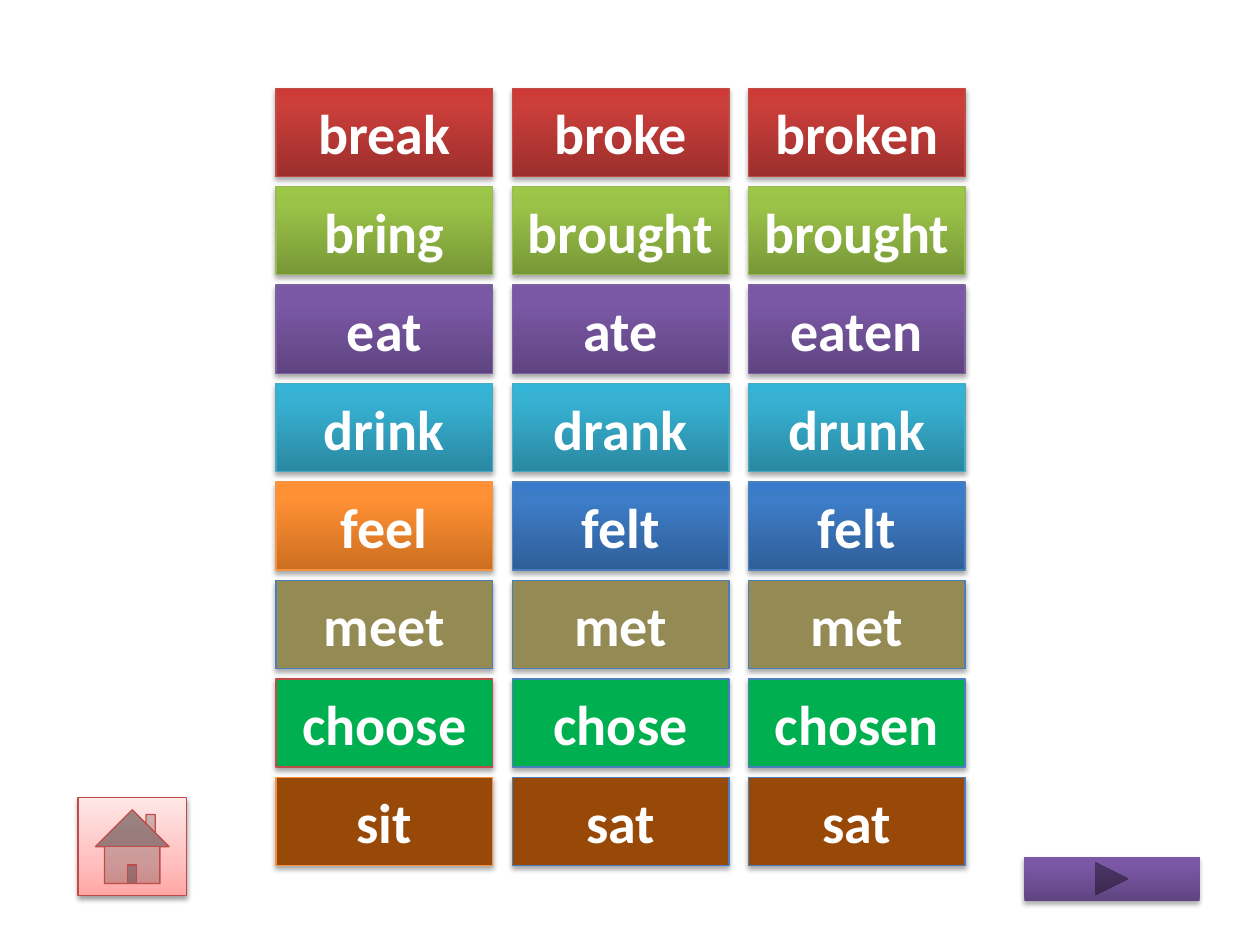
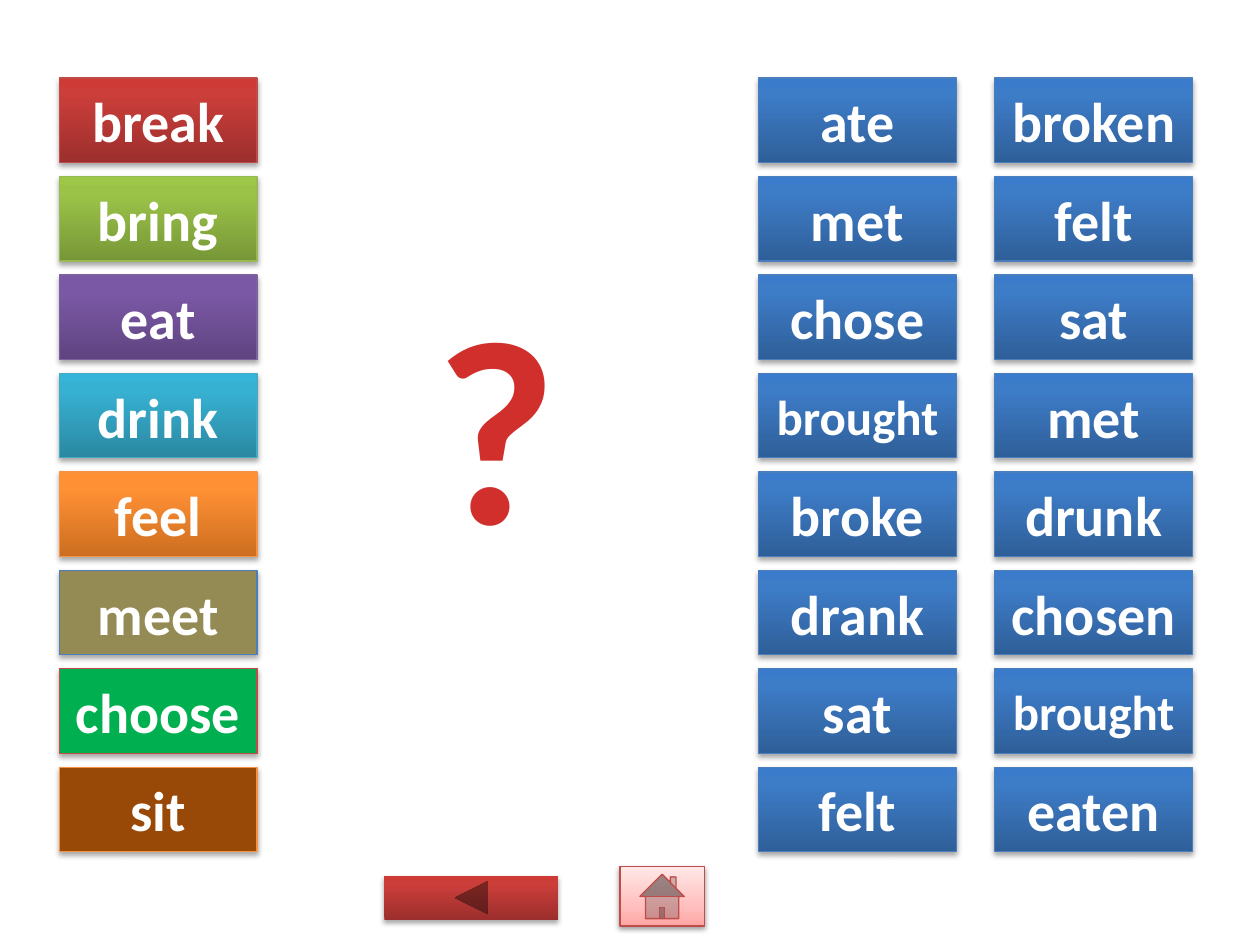
from copy import deepcopy

from lxml import etree
from pptx import Presentation
from pptx.dml.color import RGBColor
from pptx.enum.shapes import MSO_SHAPE
from pptx.enum.text import MSO_ANCHOR, MSO_AUTO_SIZE, PP_ALIGN
from pptx.oxml.ns import qn
from pptx.util import Inches, Pt

RECTANGLE = MSO_SHAPE.RECTANGLE
NEXT_BUTTON = MSO_SHAPE.ACTION_BUTTON_FORWARD_OR_NEXT
BACK_BUTTON = MSO_SHAPE.ACTION_BUTTON_BACK_OR_PREVIOUS
HOME_BUTTON = MSO_SHAPE.ACTION_BUTTON_HOME
CENTER = PP_ALIGN.CENTER
MIDDLE = MSO_ANCHOR.MIDDLE
FIT_TEXT = MSO_AUTO_SIZE.SHAPE_TO_FIT_TEXT

FONT = "Calibri"
WHITE = RGBColor(0xFF, 0xFF, 0xFF)
QUESTION_RED = RGBColor(0xD0, 0x2F, 0x2C)

# Outline colours
RED_LINE = RGBColor(0xBF, 0x4C, 0x48)
GREEN_LINE = RGBColor(0x98, 0xB9, 0x55)
PURPLE_LINE = RGBColor(0x7D, 0x60, 0xA0)
AQUA_LINE = RGBColor(0x46, 0xAA, 0xC5)
ORANGE_LINE = RGBColor(0xF6, 0x92, 0x40)
BLUE_LINE = RGBColor(0x4B, 0x7E, 0xBC)

# Plain fills
OLIVE = RGBColor(0x94, 0x8A, 0x54)
EMERALD = RGBColor(0x00, 0xB0, 0x50)
BROWN = RGBColor(0x98, 0x48, 0x07)


def gradient(bottom, middle, top, middle_at=0.8):
    """Stops of a fill that runs from the bottom edge to the top edge."""
    colors = [RGBColor.from_string(code) for code in (bottom, middle, top)]
    return list(zip((0, middle_at, 1), colors))


RED = gradient("9C2F2D", "CB3E3A", "CE3B37")
GREEN = gradient("779737", "9BC348", "9DC746")
PURPLE = gradient("5F4480", "7B58A6", "7C57A8")
AQUA = gradient("2A88A2", "37B1D2", "34B4D6")
ORANGE = gradient("CC6E20", "FF9034", "FF9136")
BLUE = gradient("2F5F99", "3D7CC7", "3A7CCB")
PINK = gradient("FFA6A5", "FFC0BF", "FFE7E7", middle_at=0.35)

# Verb forms, then (fill, line) of the infinitive and of the two past forms
VERBS = [
    (("break", "broke", "broken"), (RED, RED_LINE), (RED, RED_LINE)),
    (("bring", "brought", "brought"), (GREEN, GREEN_LINE), (GREEN, GREEN_LINE)),
    (("eat", "ate", "eaten"), (PURPLE, PURPLE_LINE), (PURPLE, PURPLE_LINE)),
    (("drink", "drank", "drunk"), (AQUA, AQUA_LINE), (AQUA, AQUA_LINE)),
    (("feel", "felt", "felt"), (ORANGE, ORANGE_LINE), (BLUE, BLUE_LINE)),
    (("meet", "met", "met"), (OLIVE, BLUE_LINE), (OLIVE, BLUE_LINE)),
    (("choose", "chose", "chosen"), (EMERALD, RED_LINE), (EMERALD, BLUE_LINE)),
    (("sit", "sat", "sat"), (BROWN, ORANGE_LINE), (BROWN, BLUE_LINE)),
]
SHUFFLED_PAST = ["ate", "met", "chose", "brought", "broke", "drank", "sat", "felt"]
SHUFFLED_PARTICIPLES = ["broken", "felt", "sat", "met", "drunk", "chosen",
                        "brought", "eaten"]

# Card grid, in inches
ROW_PITCH = 5.47 / 7
COLUMN_PITCH = 3.75 / 2
ANSWER_CARD = (1.72, 0.7)
QUIZ_CARD = (1.57, 0.67)


def set_fill(shape, fill):
    if isinstance(fill, RGBColor):
        shape.fill.solid()
        shape.fill.fore_color.rgb = fill
        return
    shape.fill.gradient()
    shape.fill.gradient_angle = 90
    stop_list = shape._element.spPr.find(qn("a:gradFill")).find(qn("a:gsLst"))
    stop_list.append(deepcopy(stop_list[-1]))
    for stop, (position, color) in zip(shape.fill.gradient_stops, fill):
        stop.position = position
        stop.color.rgb = color


def set_shadow(shape, opacity, distance):
    shape.shadow.inherit = False
    effects = shape._element.spPr.find(qn("a:effectLst"))
    shadow = etree.SubElement(effects, qn("a:outerShdw"), blurRad=str(Pt(3.1)),
                              dist=str(Pt(distance)), dir="5400000", rotWithShape="0")
    color = etree.SubElement(shadow, qn("a:srgbClr"), val="000000")
    etree.SubElement(color, qn("a:alpha"), val=str(opacity * 1000))


def add_raised_shape(page, kind, left, top, size, fill, line=None,
                     opacity=35, distance=1.8):
    shape = page.shapes.add_shape(kind, Inches(left), Inches(top), *map(Inches, size))
    set_fill(shape, fill)
    if line is None:
        shape.line.fill.background()
    else:
        shape.line.color.rgb = line
        shape.line.width = Pt(0.75)
    set_shadow(shape, opacity, distance)
    return shape


def write_centered(frame, text, size, color):
    frame.word_wrap = True
    para = frame.paragraphs[0]
    para.text = text
    para.alignment = CENTER
    para.font.name = FONT
    para.font.size = Pt(size)
    para.font.bold = True
    para.font.color.rgb = color


def add_card(page, left, top, size, word, style, font_size=32):
    card = add_raised_shape(page, RECTANGLE, left, top, size, *style)
    card.text_frame.vertical_anchor = MIDDLE
    write_centered(card.text_frame, word, font_size, WHITE)


def add_home_button(page, left, top, size):
    add_raised_shape(page, HOME_BUTTON, left, top, size, PINK, RED_LINE,
                     opacity=38, distance=1.6)


def add_question_mark(page):
    box = page.shapes.add_textbox(Inches(3.2), Inches(2.03), Inches(1.48), Inches(2.63))
    write_centered(box.text_frame, "?", 150, QUESTION_RED)
    box.text_frame.auto_size = FIT_TEXT


def build_answers(page):
    for row, (forms, first_style, past_style) in enumerate(VERBS):
        for column, word in enumerate(forms):
            style = past_style if column else first_style
            add_card(page, 2.19 + column * COLUMN_PITCH, 0.7 + row * ROW_PITCH,
                     ANSWER_CARD, word, style)
    add_raised_shape(page, NEXT_BUTTON, 8.13, 6.8, (1.39, 0.35), PURPLE)
    add_home_button(page, 0.62, 6.33, (0.86, 0.78))


def build_quiz(page):
    rows = zip(VERBS, SHUFFLED_PAST, SHUFFLED_PARTICIPLES)
    for row, ((forms, style, _), *past_words) in enumerate(rows):
        top = 0.62 + row * ROW_PITCH
        add_card(page, 0.47, top, QUIZ_CARD, forms[0], style)
        for column, word in enumerate(past_words):
            font_size = 28 if word == "brought" else 32
            add_card(page, 6.02 + column * COLUMN_PITCH, top, QUIZ_CARD, word,
                     (BLUE, BLUE_LINE), font_size)
    add_question_mark(page)
    add_raised_shape(page, BACK_BUTTON, 3.05, 6.95, (1.38, 0.35), RED)
    add_home_button(page, 4.92, 6.88, (0.67, 0.47))


def main():
    deck = Presentation()
    deck.slide_width = Inches(10)
    deck.slide_height = Inches(7.5)
    blank_layout = deck.slide_layouts[6]
    for build in (build_answers, build_quiz):
        build(deck.slides.add_slide(blank_layout))
    deck.save("out.pptx")


if __name__ == "__main__":
    main()
